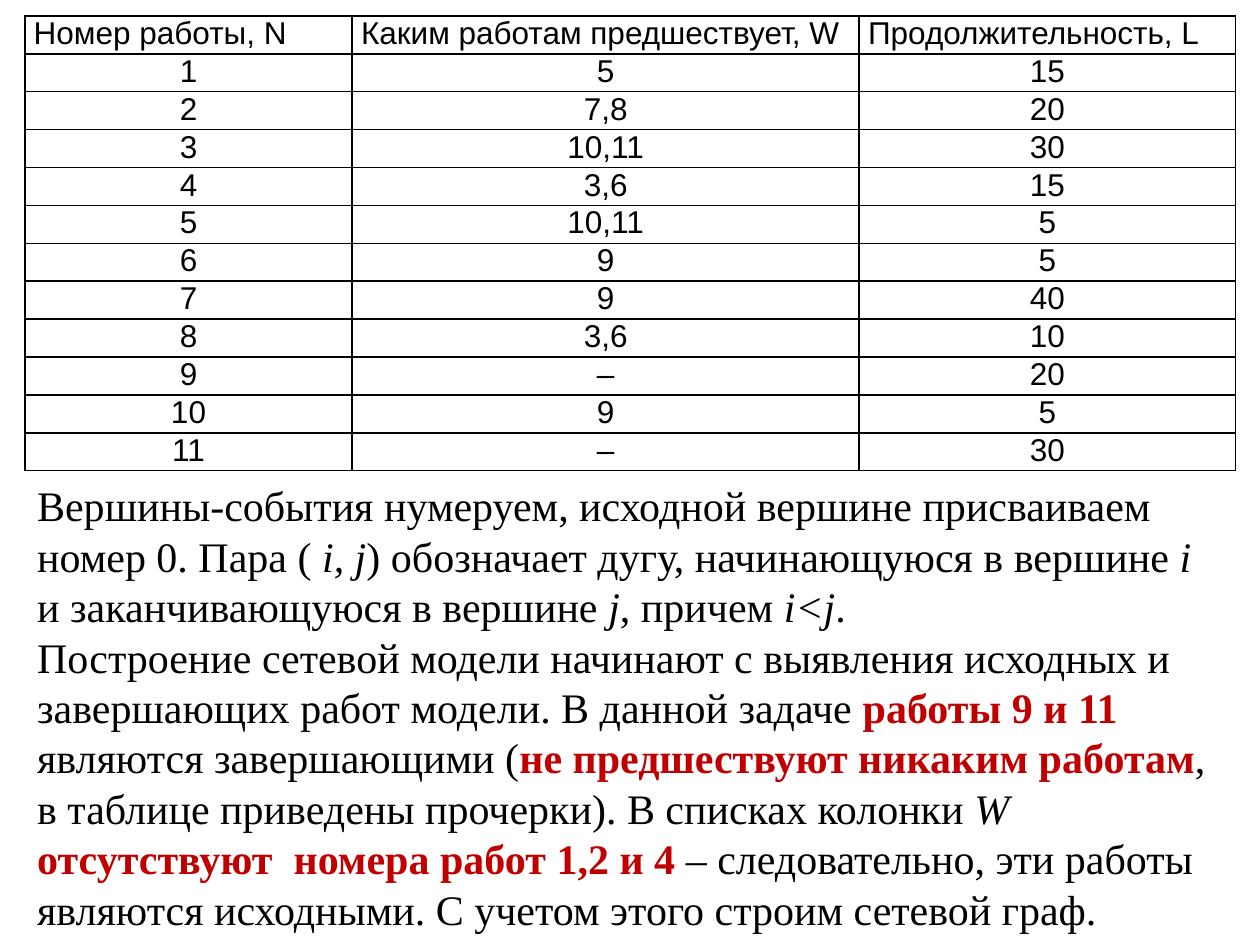
"""Build a slide with a table of jobs and an explanation of the network model."""
import pptx
import pptx.dml.color
import pptx.enum.text
import pptx.oxml
import pptx.oxml.ns
import pptx.util
from pptx.util import Cm, Pt

COLORS = {"text": "000000", "accent": "C00000", "border": "000000"}
LEFT, WIDTH = Cm(0.5), Cm(24.41)
COLUMN_WIDTHS = [Cm(6.6), Cm(10.22), Cm(7.59)]
TABLE_HEIGHT = Cm(9.17)

HEADERS = ["Номер работы, N", "Каким работам предшествует, W", "Продолжительность, L"]
FOLLOWERS = ["5", "7,8", "10,11", "3,6", "10,11", "9", "9", "3,6", "–", "9", "–"]
DURATIONS = [15, 20, 30, 15, 5, 5, 40, 10, 20, 5, 30]

EXPLANATION = [
    [
        ("Вершины-события нумеруем, исходной вершине присваиваем номер 0. Пара ( ", "plain"),
        ("i, j", "italic"),
        (") обозначает дугу, начинающуюся в вершине ", "plain"),
        ("i", "italic"),
        (" и заканчивающуюся в вершине ", "plain"),
        ("j", "italic"),
        (", причем ", "plain"),
        ("i<j", "italic"),
        (".", "plain"),
    ],
    [
        ("Построение сетевой модели начинают с выявления исходных и завершающих "
         "работ модели. В данной задаче ", "plain"),
        ("работы 9 и 11 ", "accent"),
        ("являются завершающими (", "plain"),
        ("не предшествуют никаким работам", "accent"),
        (", в таблице приведены прочерки). В списках колонки ", "plain"),
        ("W  ", "italic"),
        ("отсутствуют  номера работ 1,2 и 4 ", "accent"),
        ("– следовательно, эти работы являются исходными. "
         "С учетом этого строим сетевой граф.", "plain"),
    ],
]


def set_font(font, name, size):
    """Apply a typeface, a size and the text colour."""
    font.name = name
    font.size = Pt(size)
    font.color.rgb = pptx.dml.color.RGBColor.from_string(COLORS["text"])


def add_borders(cell):
    """Draw a one-point line on each side of a cell."""
    properties = cell._tc.get_or_add_tcPr()
    namespace = pptx.oxml.ns.nsdecls("a")
    for position, side in enumerate(("lnL", "lnR", "lnT", "lnB")):
        line = pptx.oxml.parse_xml(
            f'<a:{side} {namespace} w="12700"><a:solidFill>'
            f'<a:srgbClr val="{COLORS["border"]}"/></a:solidFill></a:{side}>'
        )
        properties.insert(position, line)


def fill_cell(cell, text, alignment):
    """Write the text of a cell and give it its look."""
    cell.margin_left = cell.margin_right = Cm(0.18)
    cell.margin_top = cell.margin_bottom = 0
    cell.fill.background()
    add_borders(cell)
    cell.text = str(text)
    paragraph = cell.text_frame.paragraphs[0]
    paragraph.alignment = alignment
    set_font(paragraph.font, "Arial", 18)


def add_job_table(slide):
    """Add the table of jobs, their followers and durations."""
    numbers = range(1, len(FOLLOWERS) + 1)
    rows = [HEADERS, *zip(numbers, FOLLOWERS, DURATIONS)]
    table = slide.shapes.add_table(
        len(rows), len(HEADERS), LEFT, Cm(0.32), WIDTH, TABLE_HEIGHT
    ).table
    table.first_row = table.horz_banding = False
    for column, width in zip(table.columns, COLUMN_WIDTHS):
        column.width = width
    alignments = pptx.enum.text.PP_ALIGN
    for row_index, values in enumerate(rows):
        alignment = alignments.CENTER if row_index else alignments.LEFT
        for column_index, value in enumerate(values):
            fill_cell(table.cell(row_index, column_index), value, alignment)


def add_explanation(slide):
    """Add the paragraphs that explain the model."""
    text_frame = slide.shapes.add_textbox(LEFT, Cm(9.55), WIDTH, Cm(9.5)).text_frame
    text_frame.word_wrap = True
    for index, runs in enumerate(EXPLANATION):
        paragraph = text_frame.add_paragraph() if index else text_frame.paragraphs[0]
        set_font(paragraph.font, "Times New Roman", 24)
        for text, style in runs:
            run = paragraph.add_run()
            run.text = text
            if style == "italic":
                run.font.italic = True
            elif style == "accent":
                run.font.bold = True
                run.font.color.rgb = pptx.dml.color.RGBColor.from_string(COLORS["accent"])


def main():
    """Create the presentation and save it."""
    presentation = pptx.Presentation()
    presentation.slide_width = Cm(25.4)
    presentation.slide_height = Cm(19.05)
    slide = presentation.slides.add_slide(presentation.slide_layouts[6])
    add_job_table(slide)
    add_explanation(slide)
    presentation.save("out.pptx")


if __name__ == "__main__":
    main()
